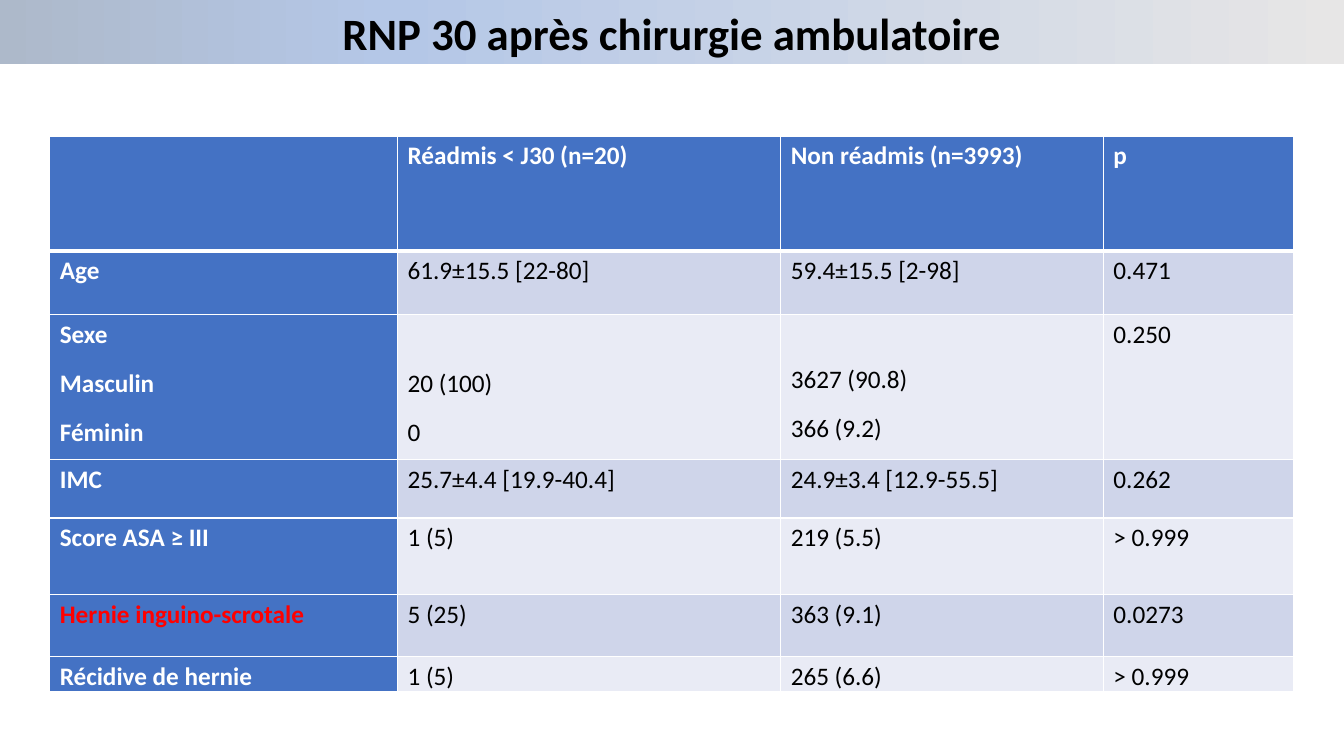
import copy

import pptx
import pptx.dml.color
import pptx.enum.shapes
import pptx.enum.text
import pptx.oxml
import pptx.oxml.ns
import pptx.util

COLORS = {
    "black": "000000", "white": "FFFFFF", "red": "FF0000", "blue": "4472C4",
    "odd": "CFD5EA", "even": "E9EBF5",
    "slate": "ADB9CA", "sky": "B4C7E7", "grey": "E7E6E6",
}
TITLE = "RNP 30 après chirurgie ambulatoire"
RESULTS = [
    ["", "Réadmis < J30 (n=20)", "Non réadmis (n=3993)", "p"],
    ["Age", "61.9±15.5 [22-80]", "59.4±15.5 [2-98]", "0.471"],
    ["Sexe\nMasculin\nFéminin", "20 (100)\n0", "3627 (90.8)\n366 (9.2)", "0.250"],
    ["IMC", "25.7±4.4 [19.9-40.4]", "24.9±3.4 [12.9-55.5]", "0.262"],
    ["Score ASA ≥ III", "1 (5)", "219 (5.5)", "> 0.999"],
    ["Hernie inguino-scrotale", "5 (25)", "363 (9.1)", "0.0273"],
    ["Récidive de hernie", "1 (5)", "265 (6.6)", "> 0.999"],
]
# Percentages of the slide's width and height
COLUMN_WIDTHS = [25.88, 28.51, 24.01, 14.18]
ROW_HEIGHTS = [15.2, 8.4, 19.2, 7.73, 10.13, 8.2, 4.67]
# Top insets that line the counts up with the second line of "Sexe"
TOP_INSETS = {(2, 1): 6.53, (2, 2): 6}
SIGNIFICANT_ROW = 5


class Slide:
    """Holds the style and the current page; lengths are percentages of its size."""

    font = "Calibri"

    def __init__(self, deck):
        self.deck = deck
        self.page = deck.slides.add_slide(deck.slide_layouts[6])

    def across(self, share):
        return round(self.deck.slide_width * share / 100)

    def down(self, share):
        return round(self.deck.slide_height * share / 100)

    def color(self, name):
        return pptx.dml.color.RGBColor.from_string(COLORS[name])

    def format_spans(self, para, size, color, bold):
        for span in para.runs:
            span.font.name = self.font
            span.font.size = pptx.util.Pt(size)
            span.font.bold = bold
            span.font.color.rgb = self.color(color)

    def add_banner(self, text, height, stops):
        box = self.page.shapes.add_shape(
            pptx.enum.shapes.MSO_SHAPE.RECTANGLE, 0, 0, self.across(100), self.down(height))
        box.shadow.inherit = False
        box.line.fill.background()
        self.fill_gradient(box.fill, stops)
        frame = box.text_frame
        frame.word_wrap = True
        frame.auto_size = pptx.enum.text.MSO_AUTO_SIZE.SHAPE_TO_FIT_TEXT
        frame.text = text
        para = frame.paragraphs[0]
        para.alignment = pptx.enum.text.PP_ALIGN.CENTER
        self.format_spans(para, 32, "black", True)

    def fill_gradient(self, fill, stops):
        fill.gradient()
        fill.gradient_angle = 0
        stop_list = fill._fill._gradFill.find(pptx.oxml.ns.qn("a:gsLst"))
        while len(stop_list) < len(stops):
            stop_list.append(copy.deepcopy(stop_list[-1]))
        for stop, (position, name) in zip(fill.gradient_stops, stops):
            stop.position = position
            stop.color.rgb = self.color(name)

    def add_table(self, left, top, widths, heights, texts):
        table = self.page.shapes.add_table(
            len(heights), len(widths), self.across(left), self.down(top),
            self.across(sum(widths)), self.down(sum(heights))).table
        for column, width in zip(table.columns, widths):
            column.width = self.across(width)
        for row, height in zip(table.rows, heights):
            row.height = self.down(height)
        for r, row_texts in enumerate(texts):
            for c, text in enumerate(row_texts):
                self.fill_cell(table.cell(r, c), r, c, text)

    def fill_cell(self, cell, r, c, text):
        heading = r == 0 or c == 0
        band = "odd" if r % 2 else "even"
        color = "white" if heading else "black"
        if c == 0 and r == SIGNIFICANT_ROW:
            color = "red"
        cell.fill.solid()
        cell.fill.fore_color.rgb = self.color("blue" if heading else band)
        self.add_borders(cell, {"L": 1, "R": 1, "T": 3 if r == 1 else 1, "B": 3 if r == 0 else 1})
        cell.margin_top = self.down(TOP_INSETS.get((r, c), 0))
        cell.margin_bottom = 0
        cell.text_frame.text = text
        for para in cell.text_frame.paragraphs:
            para.line_spacing = 1.15
            para.space_after = pptx.util.Pt(10)
            self.format_spans(para, 18, color, heading)

    def add_borders(self, cell, widths):
        properties = cell._tc.get_or_add_tcPr()
        for place, (side, width) in enumerate(widths.items()):
            properties.insert(place, pptx.oxml.parse_xml(
                f'<a:ln{side} {pptx.oxml.ns.nsdecls("a")} w="{pptx.util.Pt(width)}">'
                f'<a:solidFill><a:srgbClr val="{COLORS["white"]}"/></a:solidFill></a:ln{side}>'))


def main():
    deck = pptx.Presentation()
    deck.slide_width = pptx.util.Inches(13.33)
    deck.slide_height = pptx.util.Inches(7.5)
    slide = Slide(deck)

    # Title banner
    slide.add_banner(TITLE, 8.53, [(0, "slate"), (0.29, "sky"), (1, "grey")])

    # Comparison of readmitted and other patients
    slide.add_table(3.7, 18, COLUMN_WIDTHS, ROW_HEIGHTS, RESULTS)

    deck.save("out.pptx")


if __name__ == "__main__":
    main()
